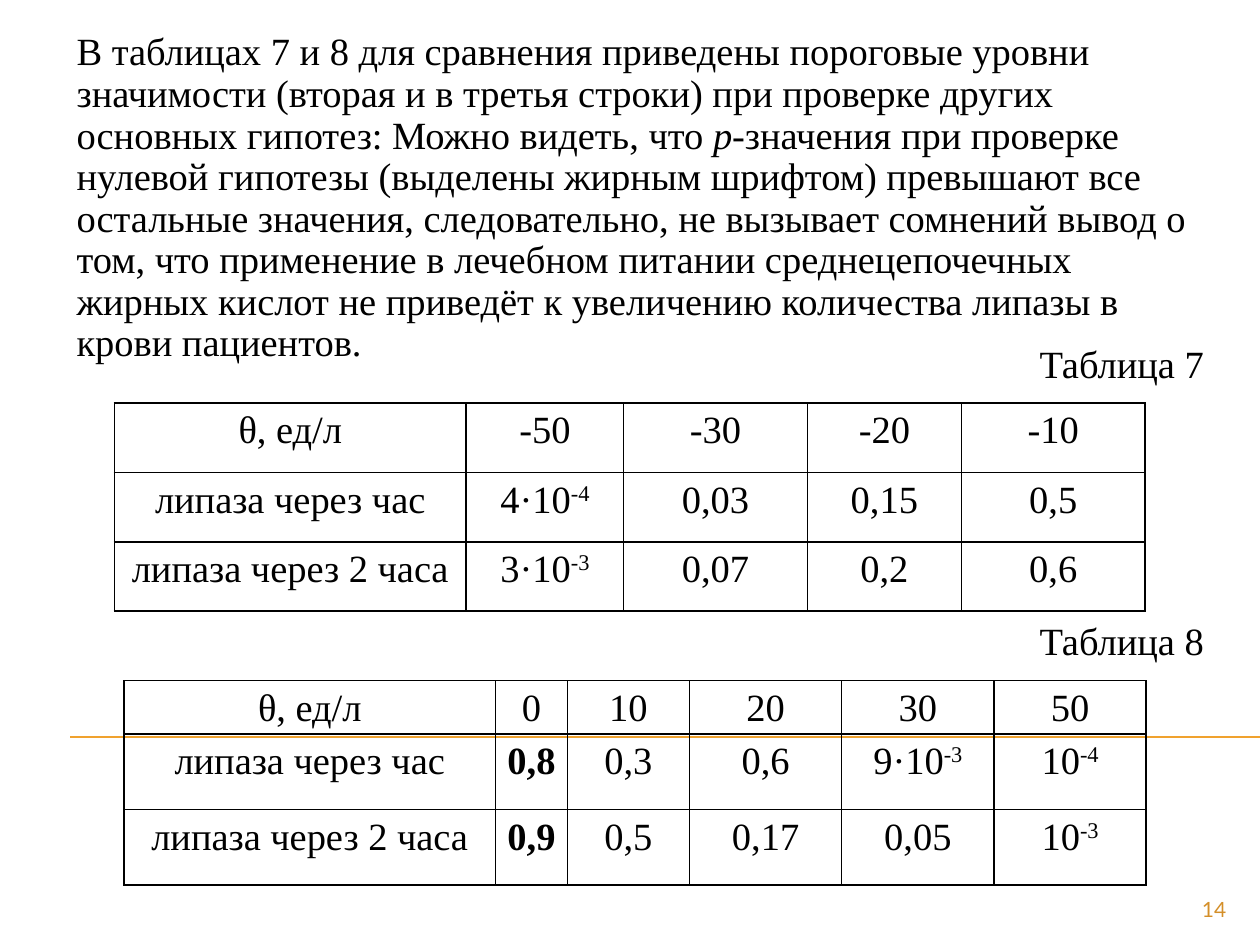
from lxml import etree
from pptx import Presentation
from pptx.dml.color import RGBColor
from pptx.enum.shapes import MSO_CONNECTOR
from pptx.enum.text import MSO_ANCHOR, PP_ALIGN
from pptx.oxml.ns import qn
from pptx.util import Pt

STRAIGHT = MSO_CONNECTOR.STRAIGHT
MIDDLE = MSO_ANCHOR.MIDDLE
CENTER, RIGHT = PP_ALIGN.CENTER, PP_ALIGN.RIGHT

BLACK = RGBColor(0x00, 0x00, 0x00)
WHITE = RGBColor(0xFF, 0xFF, 0xFF)
ORANGE = RGBColor(0xF0, 0xA2, 0x2E)
DARK_ORANGE = RGBColor(0xD4, 0x8F, 0x29)
SERIF = "Times New Roman"

INTRO = [
    "В таблицах 7 и 8 для сравнения приведены пороговые уровни значимости "
    "(вторая и в третья строки) при проверке других основных гипотез: "
    "Можно видеть, что ",
    "p",
    "-значения при проверке нулевой гипотезы (выделены жирным шрифтом) "
    "превышают все остальные значения, следовательно, не вызывает сомнений "
    "вывод о том, что применение в лечебном питании среднецепочечных жирных "
    "кислот не приведёт к увеличению количества липазы в крови пациентов.",
]

# Left, top, column widths, row heights, cell texts ("^" starts an exponent)
TABLES = [
    (65.4, 230.4, [201, 90, 105, 88, 105], [39.6, 39.6, 39.6], [
        ["θ, ед/л", "-50", "-30", "-20", "-10"],
        ["липаза через час", "4·10^-4", "0,03", "0,15", "0,5"],
        ["липаза через 2 часа", "3·10^-3", "0,07", "0,2", "0,6"],
    ]),
    (70.8, 389, [212.4, 41, 69.8, 87, 87, 87], [28, 43.2, 43.2], [
        ["θ, ед/л", "0", "10", "20", "30", "50"],
        ["липаза через час", "0,8", "0,3", "0,6", "9·10^-3", "10^-4"],
        ["липаза через 2 часа", "0,9", "0,5", "0,17", "0,05", "10^-3"],
    ]),
]
NULL_HYPOTHESIS_VALUES = ("0,8", "0,9")


def add_run(p, text, size=22, font=SERIF, color=BLACK):
    r = p.add_run()
    r.text = text
    r.font.size = Pt(size)
    r.font.name = font
    r.font.color.rgb = color
    return r


def add_borders(cell):
    """Give the cell a black 1 pt line on each side, ahead of its fill."""
    tc_pr = cell._tc.get_or_add_tcPr()
    for i, side in enumerate(("a:lnL", "a:lnR", "a:lnT", "a:lnB")):
        ln = etree.Element(qn(side), w=str(Pt(1)))
        fill = etree.SubElement(ln, qn("a:solidFill"))
        etree.SubElement(fill, qn("a:srgbClr"), val=str(BLACK))
        tc_pr.insert(i, ln)


prs = Presentation()
prs.slide_width, prs.slide_height = Pt(720), Pt(540)
s = prs.slides.add_slide(prs.slide_layouts[6])
s.background.fill.solid()
s.background.fill.fore_color.rgb = WHITE

rule = s.shapes.add_connector(STRAIGHT, Pt(40.3), Pt(421.2), Pt(720), Pt(421.2))
rule.line.color.rgb = ORANGE
rule.line.width = Pt(0.75)
etree.SubElement(rule._element.spPr, qn("a:effectLst"))

# Introduction
tf = s.shapes.add_textbox(Pt(36.7), Pt(15.1), Pt(659), Pt(209.5)).text_frame
tf.word_wrap = True
p = tf.paragraphs[0]
p.line_spacing = 0.9
for text in INTRO:
    r = add_run(p, text)
    r.font.italic = text == "p"

# Slide number
tf = s.shapes.add_textbox(Pt(648), Pt(509.8), Pt(59.8), Pt(19.4)).text_frame
tf.word_wrap = True
tf.vertical_anchor = MIDDLE
p = tf.paragraphs[0]
p.alignment = RIGHT
add_run(p, "14", 12, "Lato", DARK_ORANGE)

# Table captions
tf = s.shapes.add_textbox(Pt(36), Pt(190.8), Pt(659), Pt(238.3)).text_frame
tf.word_wrap = True
first, second = tf.paragraphs[0], tf.add_paragraph()
second.space_before = Pt(132)
for p, caption in ((first, "Таблица 7"), (second, "Таблица 8")):
    p.alignment = RIGHT
    add_run(p, caption)

# Tables
for left, top, widths, heights, rows in TABLES:
    table = s.shapes.add_table(len(rows), len(widths), Pt(left), Pt(top),
                               Pt(sum(widths)), Pt(sum(heights))).table
    table.first_row = table.horz_banding = False
    for column, width in zip(table.columns, widths):
        column.width = Pt(width)
    for row, height, texts in zip(table.rows, heights, rows):
        row.height = Pt(height)
        for cell, text in zip(row.cells, texts):
            cell.margin_left = cell.margin_right = Pt(5)
            cell.margin_top = cell.margin_bottom = 0
            cell.fill.background()
            add_borders(cell)
            p = cell.text_frame.paragraphs[0]
            p.alignment = CENTER
            p.line_spacing = 1.15
            p.space_after = Pt(10)
            base, _, exponent = text.partition("^")
            r = add_run(p, base)
            r.font.bold = text in NULL_HYPOTHESIS_VALUES
            if exponent:
                r = add_run(p, exponent)
                r.font._element.set("baseline", "30000")

prs.save("out.pptx")
